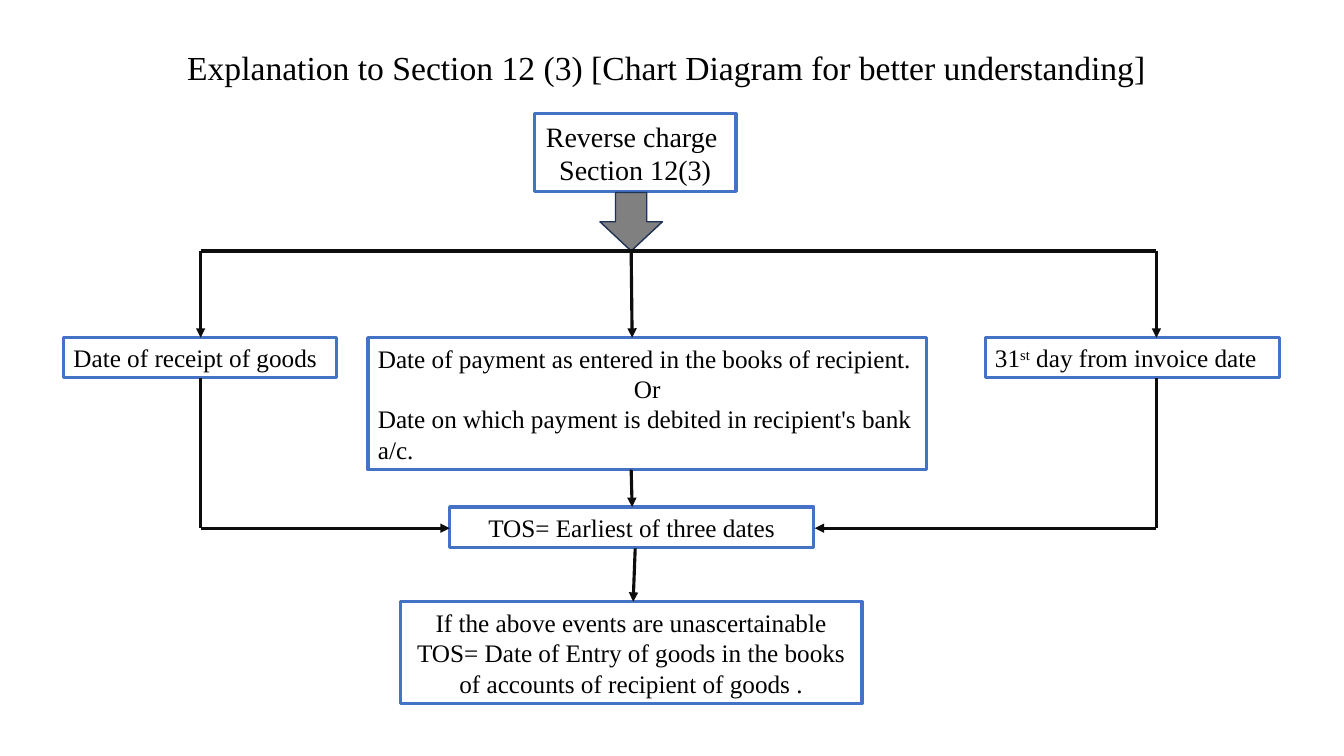
from dataclasses import dataclass

from pptx import Presentation
from pptx.dml.color import RGBColor
from pptx.enum.shapes import MSO_CONNECTOR, MSO_SHAPE
from pptx.enum.text import MSO_ANCHOR, PP_ALIGN
from pptx.oxml.ns import qn
from pptx.util import Emu, Pt
from lxml import etree

RECT, DOWN_ARROW = MSO_SHAPE.RECTANGLE, MSO_SHAPE.DOWN_ARROW
STRAIGHT = MSO_CONNECTOR.STRAIGHT
LEFT, CENTER = PP_ALIGN.LEFT, PP_ALIGN.CENTER
MIDDLE = MSO_ANCHOR.MIDDLE

FONT = "Times New Roman"
BLACK, WHITE, BLUE = "000000", "FFFFFF", "4472C4"
GRAY, NAVY, INK = "808080", "1E3256", "0D0D0D"
SUPER = "^"  # encloses superscript text


def px(n: int) -> Emu:
    """100 px to the inch."""
    return Emu(n * 9144)


def rgb(value: str) -> RGBColor:
    return RGBColor.from_string(value)


@dataclass
class Para:
    text: str
    align: PP_ALIGN = CENTER


@dataclass
class Box:
    x: int
    y: int
    w: int
    h: int
    paras: list[Para]
    size: int = 18


@dataclass
class Line:
    x1: int
    y1: int
    x2: int
    y2: int
    arrow: bool = True


def write(tf, paras: list[Para], size: int) -> None:
    tf.word_wrap = True
    for i, para in enumerate(paras):
        p = tf.add_paragraph() if i else tf.paragraphs[0]
        p.alignment = para.align
        p.font.name, p.font.size = FONT, Pt(size)
        p.font.color.rgb = rgb(BLACK)
        for j, part in enumerate(para.text.split(SUPER)):
            r = p.add_run()
            r.text = part
            if j % 2:
                r.font._element.set("baseline", "30000")


def add_shape(s, kind, x: int, y: int, w: int, h: int,
              fill: str, line: str, weight: float):
    sp = s.shapes.add_shape(kind, px(x), px(y), px(w), px(h))
    sp.shadow.inherit = False
    sp.fill.solid()
    sp.fill.fore_color.rgb = rgb(fill)
    sp.line.color.rgb = rgb(line)
    sp.line.width = Pt(weight)
    return sp


def add_box(s, box: Box) -> None:
    sp = add_shape(s, RECT, box.x, box.y, box.w, box.h, WHITE, BLUE, 2.25)
    sp.text_frame.vertical_anchor = MIDDLE
    write(sp.text_frame, box.paras, box.size)


def add_line(s, line: Line) -> None:
    c = s.shapes.add_connector(STRAIGHT, px(line.x1), px(line.y1),
                               px(line.x2), px(line.y2))
    c.line.color.rgb = rgb(INK)
    c.line.width = Pt(2.25)
    if line.arrow:
        etree.SubElement(c.line._get_or_add_ln(), qn("a:tailEnd"), type="triangle")
    etree.SubElement(c._element.spPr, qn("a:effectLst"))


# Shared positions of the branches
LEFT_X, MID_X, RIGHT_X = 199, 626, 1147
BAR_Y, DATES_Y, DATES_END, TOS_Y, MERGE_Y = 249, 335, 375, 503, 524

TITLE = Para("Explanation to Section 12 (3) [Chart Diagram for better understanding]")

BOXES = [
    Box(530, 113, 200, 77, [Para("Reverse charge "), Para("Section 12(3)")], 20),
    Box(63, DATES_Y, 271, 40, [Para("Date of receipt of goods", LEFT)]),
    Box(365, DATES_Y, 554, 131, [
        Para("Date of payment as entered in the books of recipient.", LEFT),
        Para("Or"),
        Para("Date on which payment is debited in recipient's bank a/c.", LEFT),
    ]),
    Box(977, DATES_Y, 292, 40, [Para("31^st^ day from invoice date", LEFT)]),
    Box(446, TOS_Y, 361, 40, [Para("TOS= Earliest of three dates")]),
    Box(397, 597, 458, 101, [
        Para("If the above events are unascertainable"),
        Para("TOS= Date of Entry of goods in the books of accounts of recipient of goods ."),
    ]),
]

LINES = [
    Line(LEFT_X, BAR_Y, RIGHT_X, BAR_Y, arrow=False),
    Line(MID_X, BAR_Y, MID_X + 1, DATES_Y),
    Line(MID_X, 466, MID_X + 1, TOS_Y),
    Line(630, 544, 628, 597),
]
# Outer branches: down to the date, then round to the earliest date
for x, tos_edge in ((LEFT_X, 446), (RIGHT_X, 808)):
    LINES += [
        Line(x, BAR_Y, x, DATES_Y),
        Line(x, DATES_END, x, MERGE_Y, arrow=False),
        Line(x, MERGE_Y, tos_edge, MERGE_Y),
    ]


def main() -> None:
    prs = Presentation()
    prs.slide_width, prs.slide_height = px(1333), px(750)
    s = prs.slides.add_slide(prs.slide_layouts[6])

    # Title
    title = s.shapes.add_textbox(px(108), px(42), px(1106), px(50))
    write(title.text_frame, [TITLE], 24)

    # Flow chart
    for box in BOXES:
        add_box(s, box)
    add_shape(s, DOWN_ARROW, 595, 191, 62, 58, GRAY, NAVY, 1)
    for line in LINES:
        add_line(s, line)

    prs.save("out.pptx")


if __name__ == "__main__":
    main()
